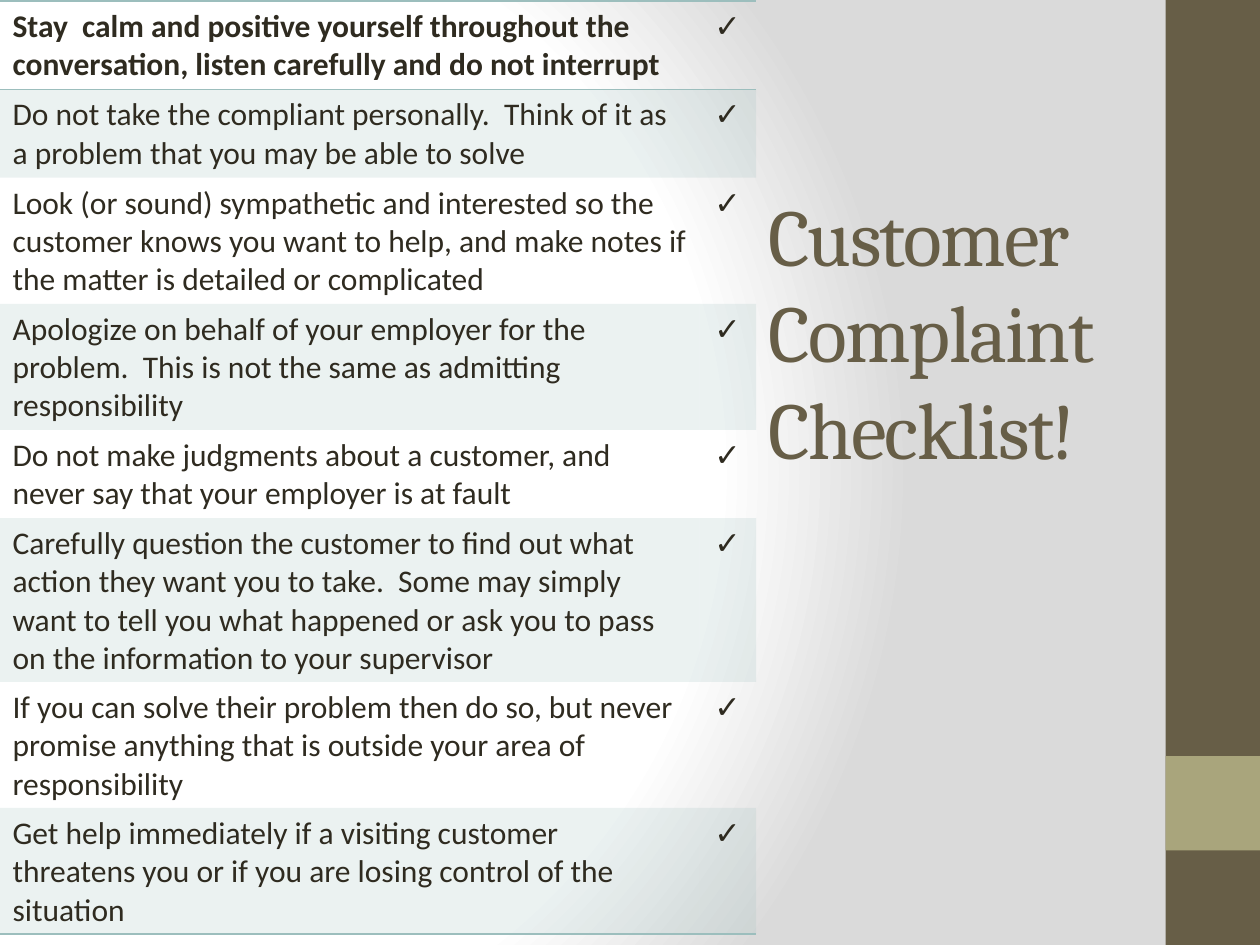
from dataclasses import dataclass

from lxml.etree import SubElement
from pptx import Presentation
from pptx.dml.color import RGBColor as RGB
from pptx.enum.shapes import MSO_SHAPE as Shape
from pptx.enum.text import MSO_ANCHOR as Anchor, PP_ALIGN as Align
from pptx.oxml.ns import qn
from pptx.util import Inches, Pt


@dataclass(frozen=True)
class Theme:
    brown: str = "675E47"
    olive: str = "A9A57C"
    teal: str = "9CBEBD"
    text: str = "2F2B20"
    white: str = "FFFFFF"
    grey: str = "DADADA"
    title_font: str = "Cambria"
    body_font: str = "Calibri"
    title_size: int = 46
    body_size: int = 18


THEME = Theme()
NO_STYLE = "{2D5ABB26-0587-4C30-8999-92F81FD0307C}"

TITLE_LINES = ["Customer ", "Complaint", "Checklist!"]
# Advice and its minimum row height in inches
CHECKLIST = [
    ("Stay  calm and positive yourself throughout the conversation, "
     "listen carefully and do not interrupt", 0.57),
    ("Do not take the compliant personally.  Think of it as a problem "
     "that you may be able to solve", 0.57),
    ("Look (or sound) sympathetic and interested so the customer knows you want "
     "to help, and make notes if the matter is detailed or complicated", 0.82),
    ("Apologize on behalf of your employer for the problem.  "
     "This is not the same as admitting responsibility", 0.57),
    ("Do not make judgments about a customer, and never say that "
     "your employer is at fault", 0.57),
    ("Carefully question the customer to find out what action they want you to "
     "take.  Some may simply want to tell you what happened or ask you to pass "
     "on the information to your supervisor", 1.06),
    ("If you can solve their problem then do so, but never promise anything "
     "that is outside your area of responsibility", 0.82),
    ("Get help immediately if a visiting customer threatens you or if you are "
     "losing control of the situation", 0.57),
]


def set_font(font, color, **values):
    for name, value in values.items():
        setattr(font, name, value)
    font.color.rgb = RGB.from_string(color)


def add_color(parent, color):
    return SubElement(parent, qn("a:srgbClr"), val=color)


def paint_background(slide):
    fill = slide.background.fill
    fill.gradient()
    gradient = slide.background._cSld.find(".//" + qn("a:gradFill"))
    for child in list(gradient):
        gradient.remove(child)
    stops = SubElement(gradient, qn("a:gsLst"))
    for percent, color in [(0, THEME.white), (75, THEME.white), (100, THEME.grey)]:
        add_color(SubElement(stops, qn("a:gs"), pos=str(percent * 1000)), color)
    circle = SubElement(gradient, qn("a:path"), path="circle")
    SubElement(circle, qn("a:fillToRect"), l="20000", t="50000", r="100000", b="50000")


def add_block(slide, top, height, color):
    block = slide.shapes.add_shape(
        Shape.RECTANGLE, Inches(9.25), Inches(top), Inches(0.75), Inches(height))
    block.shadow.inherit = False
    block.fill.solid()
    block.fill.fore_color.rgb = RGB.from_string(color)
    block.line.fill.background()


def add_title(slide):
    box = slide.shapes.add_textbox(Inches(6), Inches(2), Inches(3.08), Inches(1.25))
    frame = box.text_frame
    frame.word_wrap = True
    frame.vertical_anchor = Anchor.MIDDLE
    paragraph = frame.paragraphs[0]
    paragraph.text = "\v".join(TITLE_LINES)
    for run in paragraph.runs:
        set_font(run.font, THEME.brown, name=THEME.title_font, size=Pt(THEME.title_size))
        run.font._element.set("spc", "-100")


def add_border(cell, side):
    # Borders come before the fill in the cell properties
    properties = cell._tc.get_or_add_tcPr()
    line = SubElement(properties, qn(f"a:{side}"), w=str(Pt(1)))
    add_color(SubElement(line, qn("a:solidFill")), THEME.teal)


def fill_cell(cell, text, align, bold, shaded, borders):
    for side in borders:
        add_border(cell, side)
    if shaded:
        cell.fill.solid()
        cell.fill.fore_color.rgb = RGB.from_string(THEME.teal)
        color = cell._tc.tcPr.find(qn("a:solidFill")).find(qn("a:srgbClr"))
        SubElement(color, qn("a:alpha"), val="20000")
    else:
        cell.fill.background()
    paragraph = cell.text_frame.paragraphs[0]
    paragraph.alignment = align
    run = paragraph.add_run()
    run.text = text
    set_font(run.font, THEME.text, name=THEME.body_font,
             size=Pt(THEME.body_size), bold=bold)


def add_checklist(slide):
    frame = slide.shapes.add_table(
        len(CHECKLIST), 2, Inches(0), Inches(0.01), Inches(6), Inches(7.4))
    table = frame.table
    table.first_row = table.horz_banding = False
    table._tbl.tblPr.find(qn("a:tableStyleId")).text = NO_STYLE
    for column, width in zip(table.columns, (5.55, 0.45)):
        column.width = Inches(width)
    borders = {0: ("lnT", "lnB"), len(CHECKLIST) - 1: ("lnB",)}
    for index, (advice, height) in enumerate(CHECKLIST):
        table.rows[index].height = Inches(height)
        for column, (text, align) in enumerate([(advice, Align.LEFT), ("✓", Align.CENTER)]):
            fill_cell(table.cell(index, column), text, align, bold=index == 0,
                      shaded=index % 2 == 1, borders=borders.get(index, ()))
    frame.height = Inches(7.4)


def main():
    presentation = Presentation()
    presentation.slide_width, presentation.slide_height = Inches(10), Inches(7.5)
    slide = presentation.slides.add_slide(presentation.slide_layouts[6])
    paint_background(slide)
    # Side band with its accent square
    add_block(slide, 0, 7.5, THEME.brown)
    add_block(slide, 6, 0.75, THEME.olive)
    add_title(slide)
    add_checklist(slide)
    presentation.save("out.pptx")


if __name__ == "__main__":
    main()
